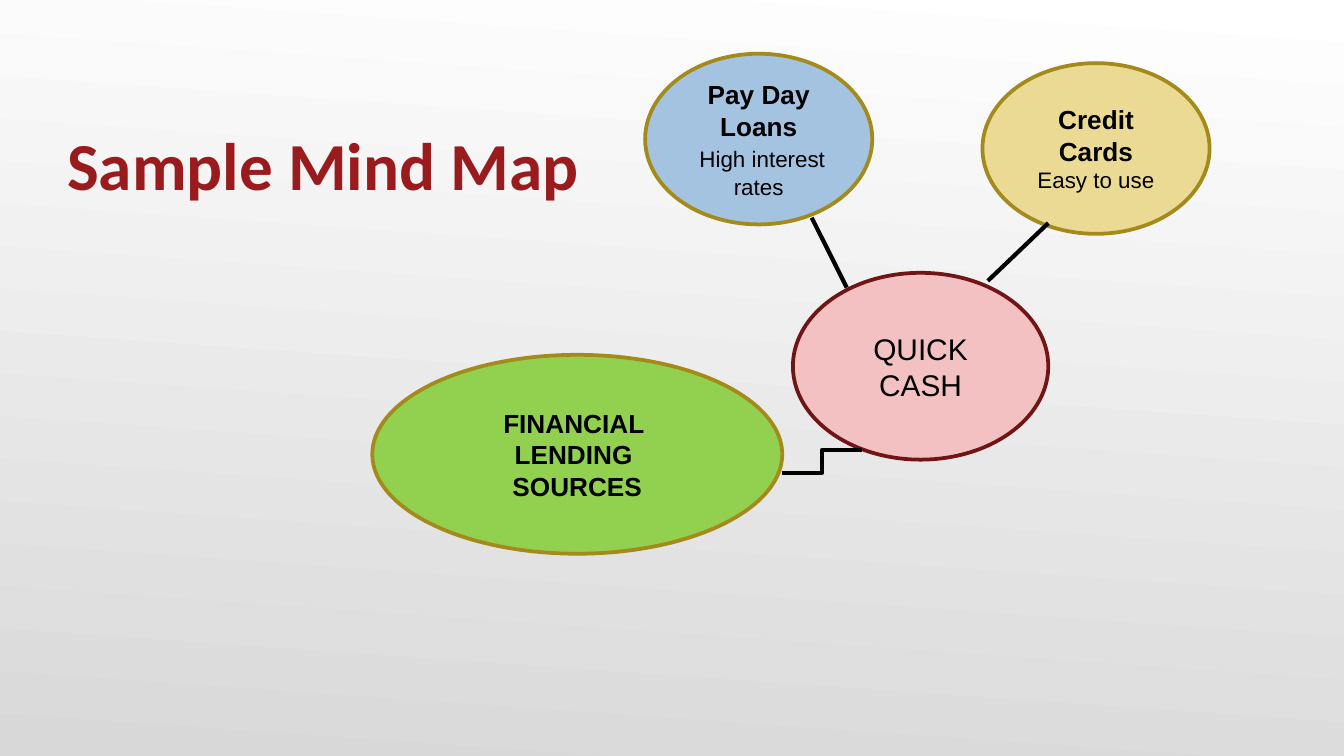
import pptx
import pptx.util
import pptx.dml.color
import pptx.enum.shapes
import pptx.enum.text
import pptx.oxml.ns
import lxml.etree

Inches = pptx.util.Inches
CONNECTOR = pptx.enum.shapes.MSO_CONNECTOR
ANCHOR = pptx.enum.text.MSO_ANCHOR
ALIGN = pptx.enum.text.PP_ALIGN

HEADING = {"name": "Arial", "size": pptx.util.Pt(14), "bold": True}
GAP = HEADING | {"bold": False}
DETAIL = GAP | {"size": pptx.util.Pt(12)}
TOPIC = GAP | {"size": pptx.util.Pt(16)}
TITLE = {"name": "Calibri", "size": pptx.util.Pt(36), "bold": True}

# Bubbles: box, fill, line, paragraphs of (text, format) runs
BUBBLES = [
    ((2.77, 2.64, 3.05, 1.48), "92D050", "A38A1B",
     [[(word, HEADING)] for word in ("FINANCIAL ", "LENDING ", "SOURCES")]),
    ((7.31, 0.47, 1.69, 1.27), "EBDA93", "A38A1B",
     [[("Credit Cards", HEADING)], [("Easy to use", DETAIL)]]),
    ((5.9, 2.03, 1.9, 1.39), "F4C1C3", "711416",
     [[("QUICK CASH", TOPIC)]]),
    ((4.8, 0.4, 1.69, 1.27), "A4C3E1", "A38A1B",
     [[("Pay Day Loans", HEADING)],
      [(" ", GAP), ("High interest rates", DETAIL)]]),
]

# Links: kind, start, end
LINKS = [
    (CONNECTOR.STRAIGHT, (7.35, 2.09), (7.8, 1.66)),
    (CONNECTOR.STRAIGHT, (6.3, 2.14), (6.04, 1.62)),
    (CONNECTOR.ELBOW, (5.82, 3.52), (6.41, 3.35)),
]


def color(value):
    return pptx.dml.color.RGBColor.from_string(value)


def write_paragraphs(frame, paragraphs, align, text_color):
    for index, runs in enumerate(paragraphs):
        para = frame.add_paragraph() if index else frame.paragraphs[0]
        para.alignment = align
        for text, formats in runs:
            span = para.add_run()
            span.text = text
            span.font.color.rgb = color(text_color)
            for name, value in formats.items():
                setattr(span.font, name, value)


def paint_background(page):
    fill = page.background.fill
    fill.gradient()
    fill.gradient_angle = 266
    for stop, (position, value) in zip(fill.gradient_stops, [(0, "FFFFFF"), (1, "D8D8D8")]):
        stop.position = position
        stop.color.rgb = color(value)


def add_bubble(page, box, fill, line, paragraphs):
    bubble = page.shapes.add_shape(
        pptx.enum.shapes.MSO_SHAPE.OVAL, *map(Inches, box))
    bubble.shadow.inherit = False
    bubble.fill.solid()
    bubble.fill.fore_color.rgb = color(fill)
    bubble.line.color.rgb = color(line)
    bubble.line.width = pptx.util.Pt(2)
    frame = bubble.text_frame
    frame.word_wrap = True
    frame.vertical_anchor = ANCHOR.MIDDLE
    write_paragraphs(frame, paragraphs, ALIGN.CENTER, "000000")


def add_link(page, kind, start, end):
    link = page.shapes.add_connector(kind, *map(Inches, start + end))
    link.line.color.rgb = color("000000")
    link.line.width = pptx.util.Pt(2.25)
    # An empty effect list removes the theme shadow
    lxml.etree.SubElement(link._element.spPr, pptx.oxml.ns.qn("a:effectLst"))


def add_title(page, box, text):
    frame = page.shapes.add_textbox(*map(Inches, box)).text_frame
    formats = {"word_wrap": True, "vertical_anchor": ANCHOR.BOTTOM,
               "margin_left": 0, "margin_right": 0,
               "margin_top": Inches(0.05), "margin_bottom": 0}
    for name, value in formats.items():
        setattr(frame, name, value)
    write_paragraphs(frame, [[(text, TITLE)]], ALIGN.LEFT, "991B1E")


def main():
    deck = pptx.Presentation()
    # Widescreen page, 16:9
    deck.slide_width, deck.slide_height = Inches(10), Inches(10 * 9 / 16)
    page = deck.slides.add_slide(deck.slide_layouts[6])
    paint_background(page)
    for bubble in BUBBLES:
        add_bubble(page, *bubble)
    for link in LINKS:
        add_link(page, *link)
    add_title(page, (0.5, 0.58, 9.08, 0.94), "Sample Mind Map")
    deck.save("out.pptx")


if __name__ == "__main__":
    main()
